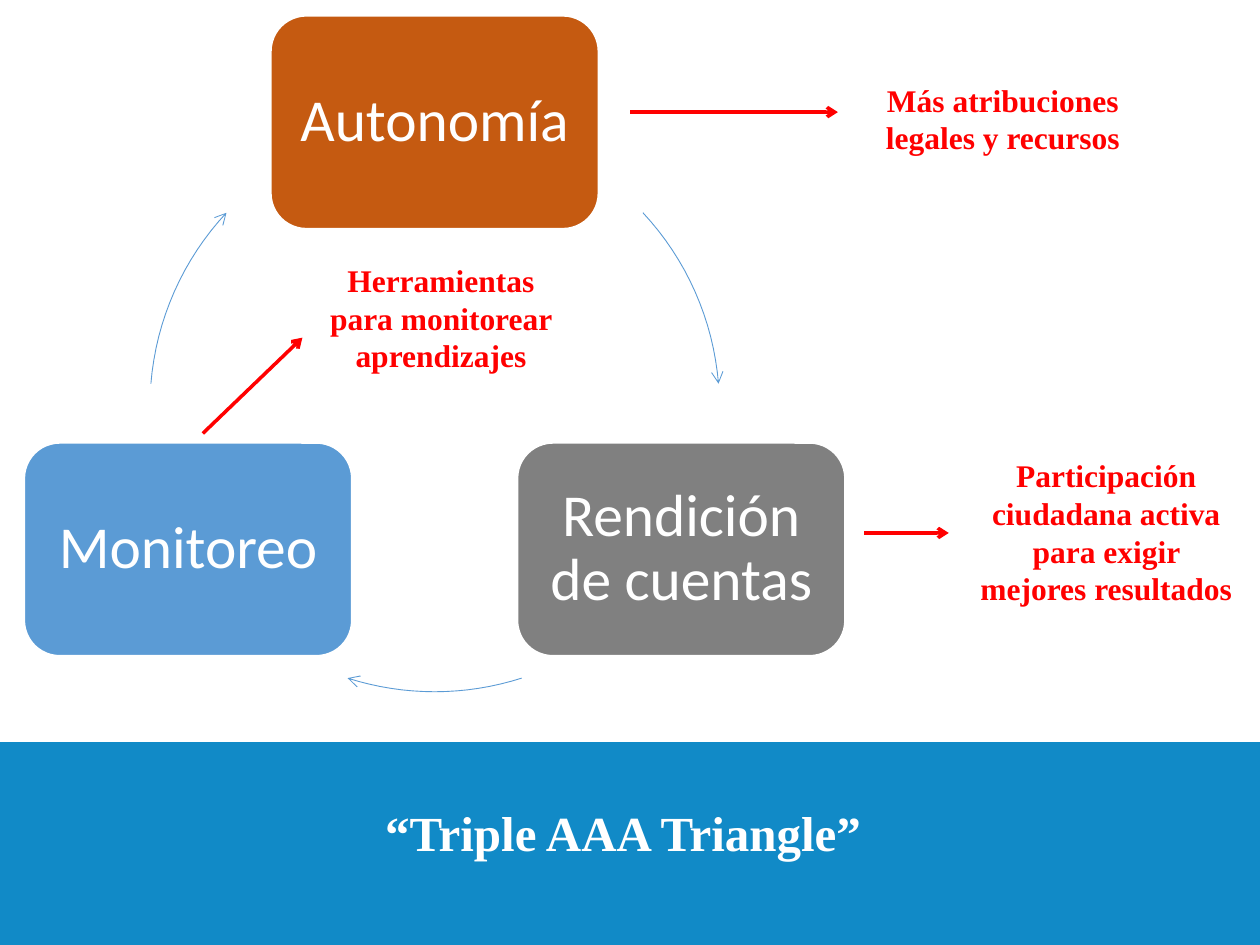
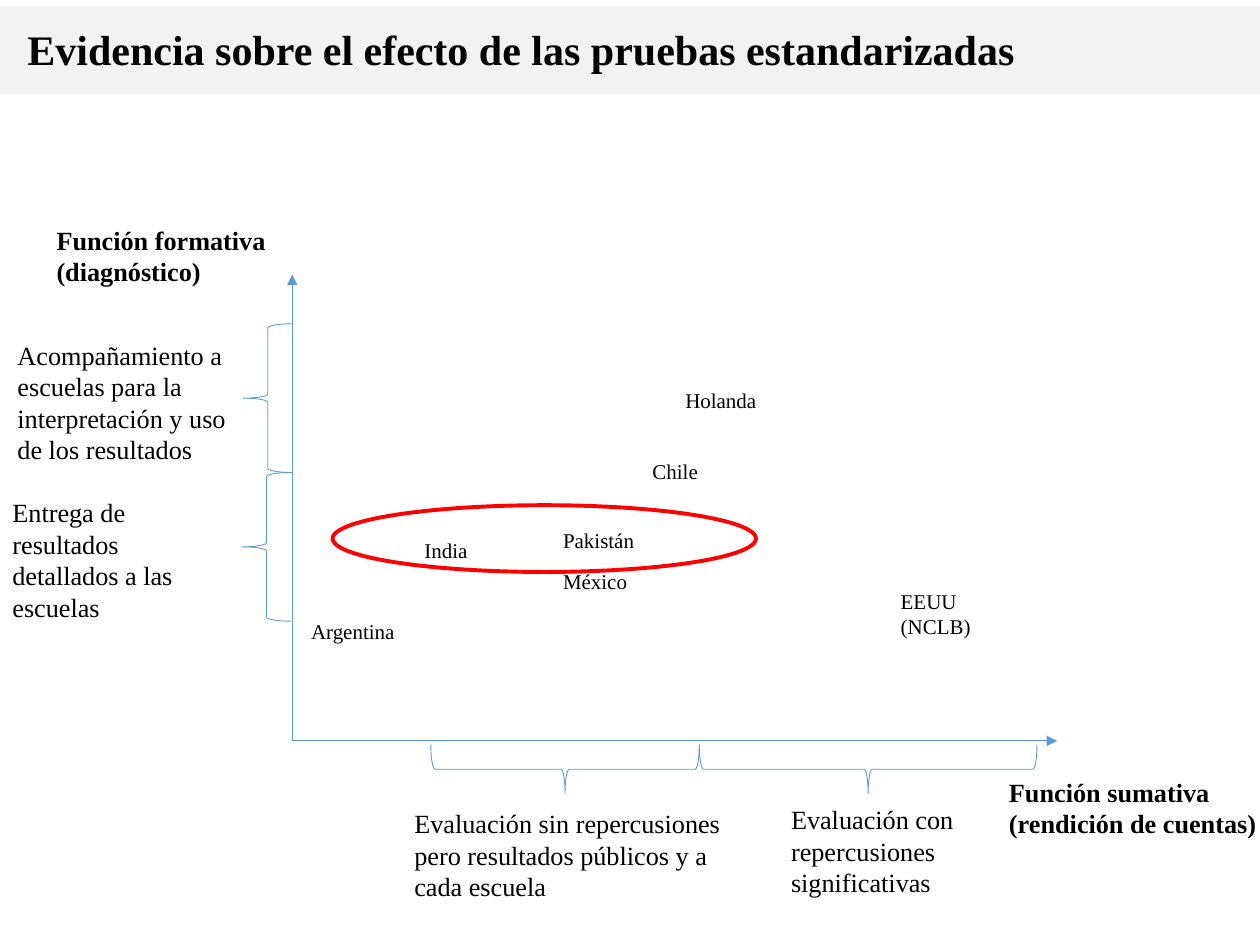
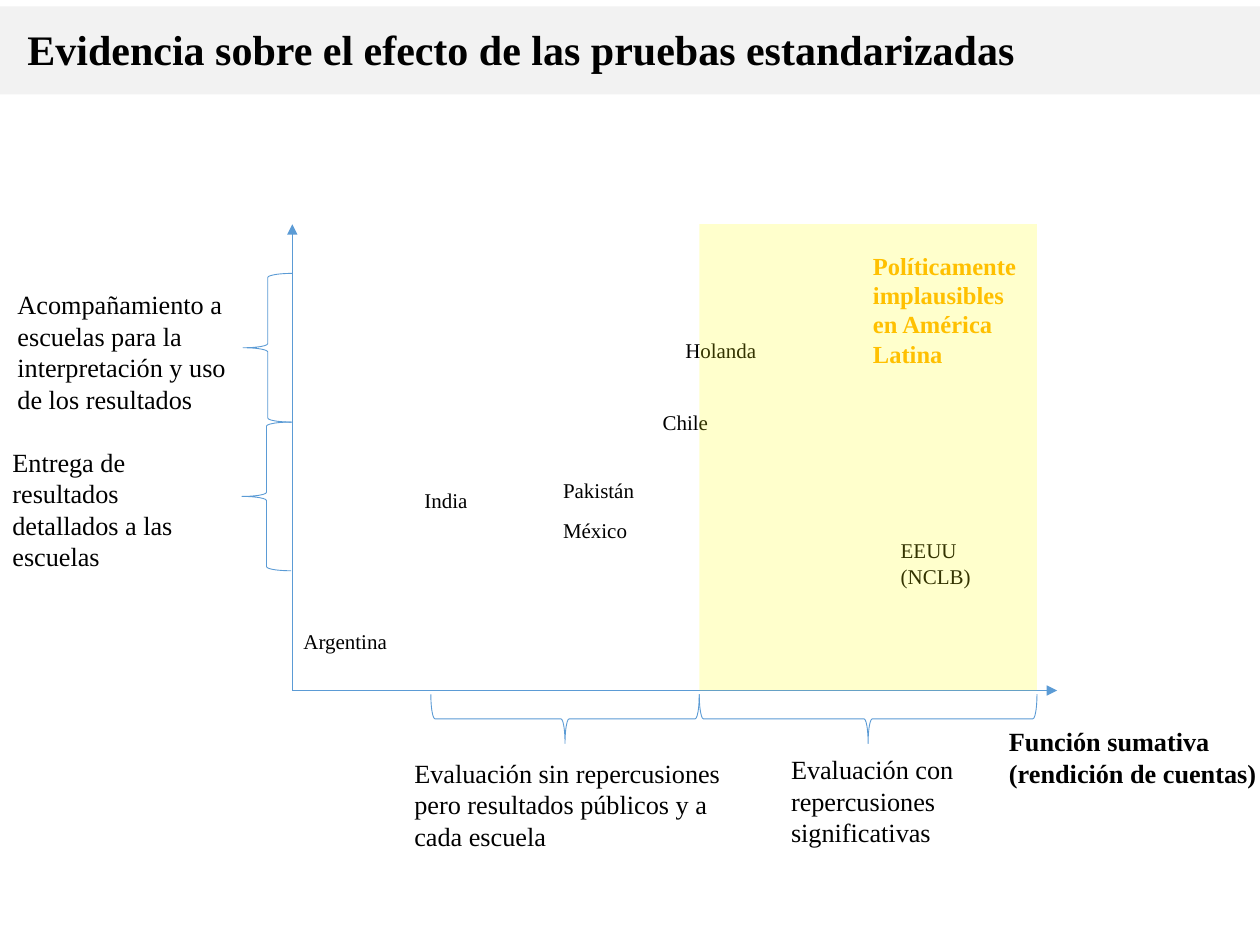
"""Build three slides on school autonomy and the effect of standardised tests."""
from dataclasses import dataclass
from math import cos, radians, sin

from lxml.etree import SubElement
from pptx import Presentation
from pptx.dml.color import RGBColor
from pptx.enum.shapes import MSO_CONNECTOR, MSO_SHAPE
from pptx.enum.text import MSO_ANCHOR, PP_ALIGN
from pptx.oxml.ns import qn
from pptx.util import Inches, Pt


@dataclass(frozen=True)
class Theme:
    serif: str = "Times New Roman"
    sans: str = "Calibri"
    black: str = "000000"
    white: str = "FFFFFF"
    red: str = "FF0000"
    blue: str = "5B9BD5"
    orange: str = "C55A11"
    gray: str = "808080"
    gold: str = "FFC000"
    yellow: str = "FFFF00"
    title_band: str = "F2F2F2"
    closing_band: str = "118AC7"
    card_size: int = 34
    closing_size: int = 28
    title_size: int = 24
    callout_size: int = 18
    axis_size: int = 15
    zone_size: int = 14
    country_size: int = 12
    thin: float = 0.5
    thick: float = 2


THEME = Theme()
WIDTH, HEIGHT = 10, 7.5

CYCLE_CENTER, CYCLE_RADIUS = (3.45, 3.23), 2.26
CARD_WIDTH, CARD_HEIGHT = 2.6, 1.69
CARDS = [
    ("Autonomía", -90, THEME.orange),
    ("Rendición de cuentas", 30, THEME.gray),
    ("Monitoreo", 150, THEME.blue),
]
CYCLE_ARCS = [(-43, -4.7), (72.2, 107.8), (184.7, 223)]
CALLOUTS = [
    ("Más atribuciones legales y recursos", (6.86, 0.59, 2.2, 0.71), (5, 0.89), (6.65, 0.89)),
    ("Participación ciudadana activa para exigir mejores resultados",
     (7.68, 3.57, 2.2, 1.31), (6.86, 4.23), (7.53, 4.23)),
    ("Herramientas para monitorear aprendizajes", (2.4, 2.02, 2.2, 1.01), (1.61, 3.44), (2.4, 2.68)),
]
CLOSING = "“Triple AAA Triangle”"

TITLE = "Evidencia sobre el efecto de las pruebas estandarizadas"
AXIS_LEFT, AXIS_LENGTH, AXIS_RISE = 2.32, 6.07, 3.7
BRACE_DEPTH = 0.39
SUMMATIVE = ("Función sumativa (rendición de cuentas)", (5.59, 0.23, 2.2, 0.61))
FORMATIVE = ("Función formativa (diagnóstico)", (-1.97, -4.15, 2.05, 0.61))
BANDS = [
    ("Evaluación con repercusiones significativas",
     (3.86, 0.45, 1.5, 0.86), (3.23, 0.03, 2.68, BRACE_DEPTH)),
    ("Evaluación sin repercusiones pero resultados públicos y a cada escuela",
     (0.87, 0.48, 2.68, 0.86), (1.1, 0.03, 2.13, BRACE_DEPTH)),
    ("Entrega de resultados detallados a las escuelas",
     (-2.32, -1.99, 1.89, 0.86), (-0.4, -2.13, BRACE_DEPTH, 1.18)),
    ("Acompañamiento a escuelas para la interpretación y uso de los resultados",
     (-2.28, -3.24, 1.89, 1.11), (-0.39, -3.31, BRACE_DEPTH, 1.18)),
]
COUNTRIES = {
    "EEUU (NCLB)": (4.73, -1.26),
    "Holanda": (3.02, -2.85),
    "México": (2.05, -1.42),
    "Argentina": (0.05, -1.02),
    "Chile": (2.76, -2.29),
    "India": (0.95, -1.66),
    "Pakistán": (2.05, -1.74),
}
MOVED = {"Argentina": (-0.01, -0.54), "Chile": (2.84, -2.28)}
FOCUS = (0.32, -1.87, 3.36, 0.53)
ZONE = (3.23, -AXIS_RISE, 2.68, AXIS_RISE)
ZONE_NOTE = ("Políticamente implausibles en América Latina", (4.51, -3.54, 1.39, 1.04))


def color(code):
    return RGBColor.from_string(code)


def inches(values):
    return [Inches(value) for value in values]


def write(shape, text, *, size, font=THEME.serif, fill=THEME.black, bold=False,
          align=PP_ALIGN.LEFT, anchor=MSO_ANCHOR.TOP, spacing=None, inset=None):
    frame = shape.text_frame
    frame.word_wrap = True
    frame.vertical_anchor = anchor
    if inset is not None:
        frame.margin_left = frame.margin_right = Inches(inset)
        frame.margin_top = frame.margin_bottom = Inches(inset)
    para = frame.paragraphs[0]
    para.alignment = align
    para.line_spacing = spacing
    span = para.add_run()
    span.text = text
    span.font.name, span.font.size, span.font.bold = font, Pt(size), bold
    span.font.color.rgb = color(fill)


def label(page, text, box, **style):
    write(page.shapes.add_textbox(*inches(box)), text, **style)


def paint(shape, fill=None, line=None, weight=THEME.thin, opacity=None):
    shape.shadow.inherit = False
    if fill:
        shape.fill.solid()
        shape.fill.fore_color.rgb = color(fill)
    else:
        shape.fill.background()
    if opacity is not None:
        tint = shape.fill._xPr.find(qn("a:solidFill"))[0]
        SubElement(tint, qn("a:alpha")).set("val", str(opacity * 1000))
    if line:
        shape.line.color.rgb = color(line)
        shape.line.width = Pt(weight)
    else:
        shape.line.fill.background()
    return shape


def figure(page, kind, box, **look):
    return paint(page.shapes.add_shape(kind, *inches(box)), **look)


def add_head(shape, head):
    SubElement(shape.line._get_or_add_ln(), qn("a:tailEnd")).set("type", head)


def arrow(page, start, end, line, weight, head):
    connector = page.shapes.add_connector(MSO_CONNECTOR.STRAIGHT, *inches(start + end))
    connector.line.color.rgb = color(line)
    connector.line.width = Pt(weight)
    add_head(connector, head)
    SubElement(connector._element.spPr, qn("a:effectLst"))


def on_cycle(angle):
    x, y = CYCLE_CENTER
    return x + CYCLE_RADIUS * cos(radians(angle)), y + CYCLE_RADIUS * sin(radians(angle))


def cycle_arc(page, first, last, steps=16):
    points = [inches(on_cycle(first + (last - first) * step / steps)) for step in range(steps + 1)]
    builder = page.shapes.build_freeform(*points[0])
    builder.add_line_segments(points[1:], close=False)
    add_head(paint(builder.convert_to_shape(), line=THEME.blue), "arrow")


def brace(page, box):
    left, top, width, height = box
    if width > height:
        shift = (width - height) / 2
        box = (left + shift, top - shift, height, width)
    shape = figure(page, MSO_SHAPE.LEFT_BRACE, box, line=THEME.blue)
    shape.rotation = 270 if width > height else 0


def from_origin(base, box):
    return (AXIS_LEFT + box[0], base + box[1], *box[2:])


def cycle_page(page):
    for name, angle, fill in CARDS:
        x, y = on_cycle(angle)
        box = (x - CARD_WIDTH / 2, y - CARD_HEIGHT / 2, CARD_WIDTH, CARD_HEIGHT)
        card = figure(page, MSO_SHAPE.ROUNDED_RECTANGLE, box, fill=fill, line=THEME.white, weight=1)
        write(card, name, size=THEME.card_size, font=THEME.sans, fill=THEME.white,
              align=PP_ALIGN.CENTER, anchor=MSO_ANCHOR.MIDDLE, spacing=0.9, inset=0.14)
    for first, last in CYCLE_ARCS:
        cycle_arc(page, first, last)
    for text, box, start, end in CALLOUTS:
        arrow(page, start, end, THEME.red, THEME.thick, "arrow")
        label(page, text, box, size=THEME.callout_size, fill=THEME.red, bold=True,
              align=PP_ALIGN.CENTER)
    band_top = 5.89
    figure(page, MSO_SHAPE.RECTANGLE, (0, band_top, WIDTH, HEIGHT - band_top), fill=THEME.closing_band)
    label(page, CLOSING, (0.32, 6.01, 9.25, 1.25), size=THEME.closing_size, fill=THEME.white,
          bold=True, align=PP_ALIGN.CENTER, anchor=MSO_ANCHOR.MIDDLE, spacing=0.9)


def evidence_page(page, base, countries, axis_names):
    origin = (AXIS_LEFT, base)
    for end in ((AXIS_LEFT + AXIS_LENGTH, base), (AXIS_LEFT, base - AXIS_RISE)):
        arrow(page, origin, end, THEME.blue, THEME.thin, "triangle")
    for text, box in axis_names:
        label(page, text, from_origin(base, box), size=THEME.axis_size, bold=True)
    for name, place in countries.items():
        height = 0.5 if " " in name else 0.3
        label(page, name, from_origin(base, (*place, 1.02, height)), size=THEME.country_size)
    for text, text_box, brace_box in BANDS:
        brace(page, from_origin(base, brace_box))
        label(page, text, from_origin(base, text_box), size=THEME.axis_size)
    figure(page, MSO_SHAPE.RECTANGLE, (0, 0.05, WIDTH, 0.7), fill=THEME.title_band)
    label(page, TITLE, (0.12, 0.14, 8.27, 0.5), size=THEME.title_size, bold=True)


def main():
    deck = Presentation()
    deck.slide_width, deck.slide_height = inches((WIDTH, HEIGHT))
    cycle, focus, zone = [deck.slides.add_slide(deck.slide_layouts[6]) for _ in range(3)]
    cycle_page(cycle)

    base = 5.88
    evidence_page(focus, base, COUNTRIES, [SUMMATIVE, FORMATIVE])
    figure(focus, MSO_SHAPE.OVAL, from_origin(base, FOCUS), line=THEME.red, weight=2.25)

    base = 5.48
    evidence_page(zone, base, COUNTRIES | MOVED, [SUMMATIVE])
    figure(zone, MSO_SHAPE.RECTANGLE, from_origin(base, ZONE), fill=THEME.yellow, opacity=20)
    text, box = ZONE_NOTE
    label(zone, text, from_origin(base, box), size=THEME.zone_size, fill=THEME.gold, bold=True)
    deck.save("out.pptx")


if __name__ == "__main__":
    main()
